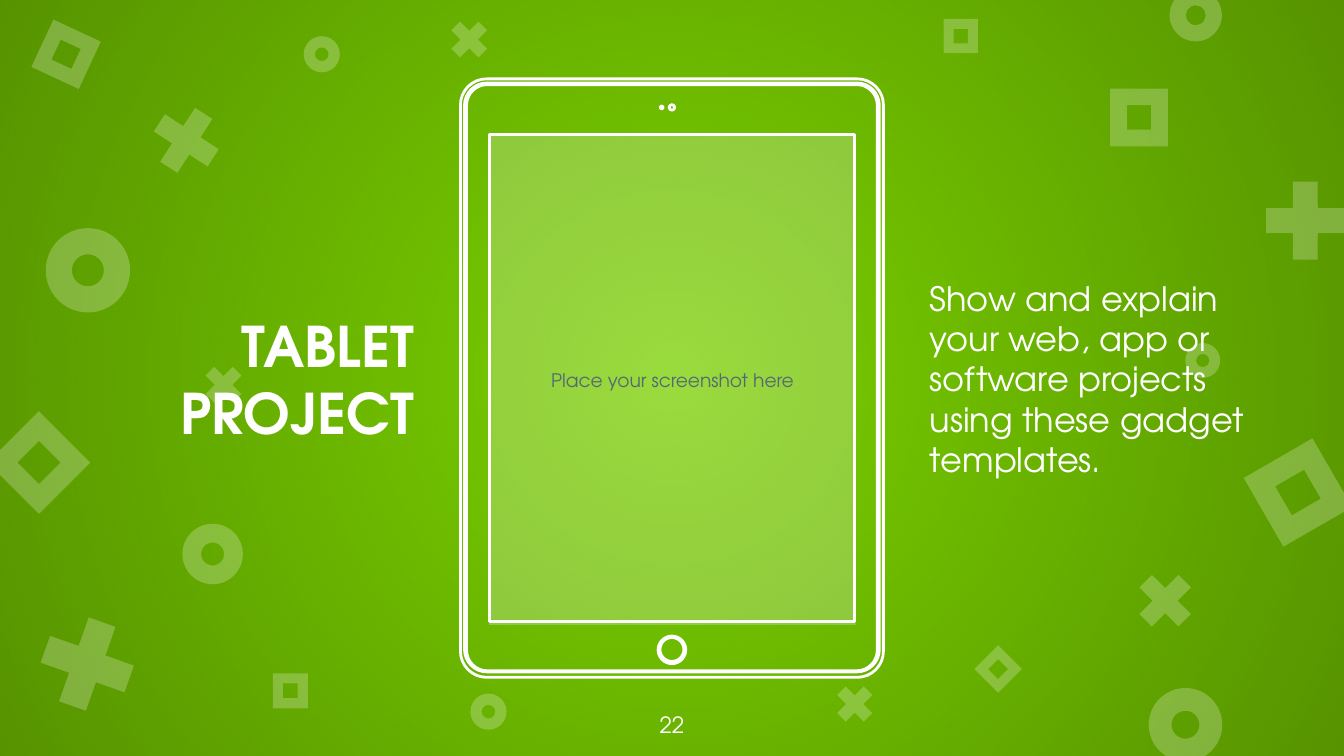
import math
from dataclasses import dataclass

import pptx
import pptx.dml.color
import pptx.enum.shapes
import pptx.enum.text
import pptx.oxml
import pptx.oxml.ns
import pptx.util

Pt = pptx.util.Pt
RGB = pptx.dml.color.RGBColor.from_string
SHAPE = pptx.enum.shapes.MSO_SHAPE
ALIGN = pptx.enum.text.PP_ALIGN
ANCHOR = pptx.enum.text.MSO_ANCHOR
A_NS = pptx.oxml.ns.nsdecls("a")


@dataclass(frozen=True)
class Theme:
    font: str = "TeX Gyre Adventor"
    green: str = "7BD100"
    white: str = "FFFFFF"
    gray: str = "546973"
    veil_alpha: int = 24
    title: int = 30
    body: int = 18
    page: int = 12
    hint: int = 10


theme = Theme()


def fill_veil(shape):
    """Give a shape a translucent white fill without line or shadow."""
    shape.shadow.inherit = False
    shape.line.fill.background()
    shape.fill.solid()
    shape.fill.fore_color.rgb = RGB(theme.white)
    color = shape.fill._xPr.find(".//" + pptx.oxml.ns.qn("a:srgbClr"))
    color.append(pptx.oxml.parse_xml(
        f'<a:alpha {A_NS} val="{theme.veil_alpha * 1000}"/>'))


def write(shape, text, size, color, align, anchor, bold=False, before=0):
    frame = shape.text_frame
    frame.text = text
    frame.word_wrap = True
    frame.vertical_anchor = anchor
    frame.margin_left = frame.margin_right = Pt(7.2)
    frame.margin_top = frame.margin_bottom = Pt(7.2)
    paragraph = frame.paragraphs[0]
    paragraph.alignment = align
    paragraph.space_before = Pt(before)
    font = paragraph.runs[0].font
    font.name, font.size, font.bold = theme.font, Pt(size), bold
    font.color.rgb = RGB(color)


deck = pptx.Presentation()
deck.slide_width, deck.slide_height = Pt(720), Pt(405)
slide = deck.slides.add_slide(deck.slide_layouts[6])
shapes = slide.shapes

# Green background, darkened towards the edges
slide.background.fill.solid()
slide.background.fill.fore_color.rgb = RGB(theme.green)
vignette = shapes.add_shape(SHAPE.RECTANGLE, 0, 0, Pt(720), Pt(405))
vignette.shadow.inherit = False
vignette.line.fill.background()
vignette.fill.background()
no_fill = vignette._element.spPr.find(pptx.oxml.ns.qn("a:noFill"))
no_fill.getparent().replace(no_fill, pptx.oxml.parse_xml(
    f'<a:gradFill {A_NS}><a:gsLst>'
    '<a:gs pos="0"><a:srgbClr val="000000"><a:alpha val="0"/></a:srgbClr></a:gs>'
    '<a:gs pos="100000"><a:srgbClr val="000000"><a:alpha val="30000"/></a:srgbClr></a:gs>'
    '</a:gsLst><a:path path="circle">'
    '<a:fillToRect l="50000" t="50000" r="50000" b="50000"/></a:path></a:gradFill>'))

# Scattered rings, squares and crosses: left, top, size, rotation
confetti = {
    (SHAPE.DONUT, 0.31): [
        (615.4, 368.6, 39.4, 0), (24.5, 122.2, 45.2, 0), (97.7, 280.6, 32.4, 0),
        (626.6, -5.8, 28, 0), (162.7, 19.4, 19.4, 0), (635, 183.8, 18.7, 0),
        (252, 371.6, 19.4, 0)],
    (SHAPE.FRAME, 0.289): [
        (1.4, 228.4, 38.9, 45), (674.1, 242.6, 42.5, 330), (594.8, 47.5, 30.9, 0),
        (21.4, 15.1, 28, 25), (146.2, 360.8, 18.7, 0), (525.7, 349.4, 18, 315),
        (505.6, 10.2, 18.3, 0)],
    (SHAPE.MATH_MULTIPLY, 0.235): [
        (670.8, 89.8, 56.9, 45), (14.4, 323.4, 64.8, 334.5), (76.4, 51.8, 46.8, 348),
        (604.1, 301.7, 40.3, 0), (237.4, 7.2, 28, 0), (105.8, 192.2, 28, 0),
        (444.2, 363.5, 27.4, 0)],
}
for (kind, thickness), places in confetti.items():
    for left, top, size, rotation in places:
        piece = shapes.add_shape(kind, Pt(left), Pt(top), Pt(size), Pt(size))
        piece.adjustments[0] = thickness
        piece.rotation = rotation
        fill_veil(piece)

# Tablet outline: left, top, width, height, corner radius of each contour
contours = [
    (246.7, 42.3, 226.6, 320.6, 14),      # outer edge
    (248.9, 44.5, 222.2, 315.5, 12),      # rim
    (250, 45.4, 220, 314, 11),            # inner edge
    (262.1, 72, 195.8, 261.1, 0),         # screen
    (352.6, 340.8, 14.8, 14.8, 7.4),      # home button
    (353.6, 341.6, 12.8, 12.8, 6.4),
    (358.6, 56.2, 2.8, 2.8, 1.4),         # camera
    (353.8, 56.9, 1.4, 1.4, 0.7),         # sensor
]
STEPS = 8
tablet_pen = None
for left, top, width, height, radius in contours:
    corners = [(left + width - radius, top + height - radius),
               (left + radius, top + height - radius),
               (left + radius, top + radius),
               (left + width - radius, top + radius)]
    points = []
    for quarter, (x, y) in enumerate(corners):
        for step in range(STEPS + 1 if radius else 1):
            angle = (quarter + step / STEPS) * math.pi / 2
            points.append((100 * (x + radius * math.cos(angle)),
                           100 * (y + radius * math.sin(angle))))
    if tablet_pen is None:
        tablet_pen = shapes.build_freeform(*points[0], scale=Pt(1) / 100)
    else:
        tablet_pen.move_to(*points[0])
    tablet_pen.add_line_segments(points[1:], close=True)
tablet = tablet_pen.convert_to_shape()
tablet.shadow.inherit = False
tablet.fill.background()
tablet.line.color.rgb = RGB(theme.white)
tablet.line.width = Pt(1.5)

# Screenshot area
screen = shapes.add_shape(SHAPE.RECTANGLE, Pt(262), Pt(72), Pt(196.4), Pt(262.8))
fill_veil(screen)
write(screen, "Place your screenshot here", theme.hint, theme.gray,
      ALIGN.CENTER, ANCHOR.MIDDLE)

# Title, description and page number
title = shapes.add_textbox(Pt(24.5), Pt(17.3), Pt(204.5), Pt(370.8))
write(title, "TABLET PROJECT", theme.title, theme.white,
      ALIGN.RIGHT, ANCHOR.MIDDLE, bold=True, before=6)
description = shapes.add_textbox(Pt(491), Pt(17.3), Pt(204.5), Pt(370.8))
write(description,
      "Show and explain your web, app or software projects using these gadget templates.",
      theme.body, theme.white, ALIGN.LEFT, ANCHOR.MIDDLE, before=6)
page_number = shapes.add_textbox(Pt(338.4), Pt(373.7), Pt(43.2), Pt(31))
write(page_number, "22", theme.page, theme.white, ALIGN.CENTER, ANCHOR.TOP)

deck.save("out.pptx")
